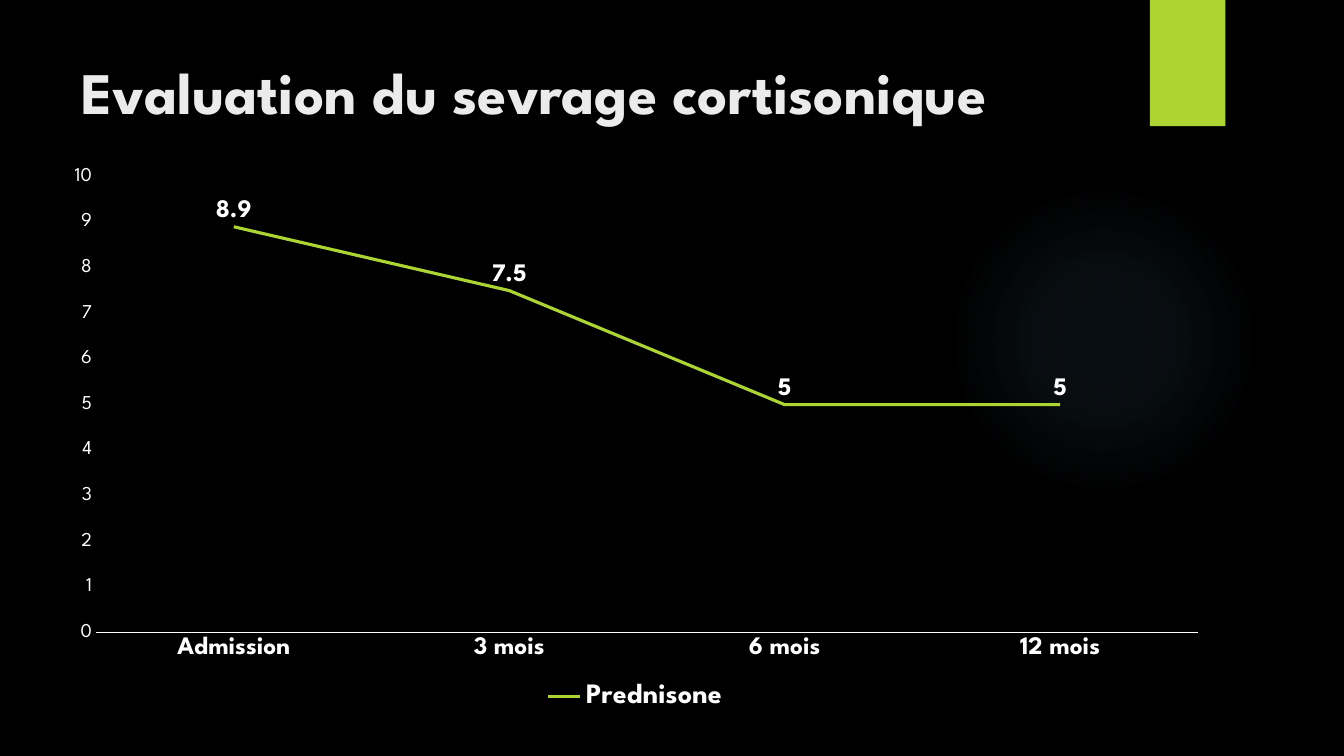
from dataclasses import dataclass

from pptx import Presentation
from pptx import util as u
from pptx.chart import data as chart_data
from pptx.dml import color
from pptx.enum import chart as kinds, shapes, text
from pptx.oxml import parse_xml
from pptx.oxml.ns import nsdecls


@dataclass(frozen=True)
class Theme:
    font: str = "League Spartan"
    back: str = "000000"
    accent: str = "ACD433"
    glow: str = "7AC4F0"
    heading: str = "EBEBEB"
    body: str = "FFFFFF"
    title_size: int = 42
    legend_size: int = 20
    label_size: int = 18
    scale_size: int = 14
    base_size: int = 10


THEME = Theme()
MONTHS = ("Admission", "3 mois", "6 mois", "12 mois")
PREDNISONE = (8.9, 7.5, 5, 5)
GLOW_STOPS = ((0, 7), (36, 6), (69, 0))
PLOT_AREA = {"x": 0.04, "y": 0.035, "w": 0.94, "h": 0.817}


def rgb(code):
    return color.RGBColor.from_string(code)


def apply(target, values):
    for name, value in values.items():
        setattr(target, name, value)


def style_font(font, size, code=THEME.body, bold=False):
    apply(font, {"name": THEME.font, "size": u.Pt(size), "bold": bold})
    font.color.rgb = rgb(code)


def style_line(line, code, width):
    line.color.rgb = rgb(code)
    line.width = u.Pt(width)


def add_block(page, kind, left, top, width, height, code):
    block = page.shapes.add_shape(kind, *map(u.Cm, (left, top, width, height)))
    block.shadow.inherit = False
    block.line.fill.background()
    block.fill.solid()
    block.fill.fore_color.rgb = rgb(code)
    return block


def add_glow(page, left, top, size):
    glow = add_block(page, shapes.MSO_SHAPE.OVAL, left, top, size, size, THEME.glow)
    stops = "".join(
        f'<a:gs pos="{place * 1000}"><a:srgbClr val="{THEME.glow}">'
        f'<a:alpha val="{alpha * 1000}"/></a:srgbClr></a:gs>'
        for place, alpha in GLOW_STOPS
    )
    gradient = parse_xml(
        f'<a:gradFill {nsdecls("a")}><a:gsLst>{stops}</a:gsLst><a:path path="circle">'
        '<a:fillToRect l="50000" t="50000" r="50000" b="50000"/></a:path></a:gradFill>'
    )
    properties = glow._element.spPr
    solid = properties.find(".//{*}solidFill")
    properties.replace(solid, gradient)


def add_title(page, wording, left, top, width, height):
    box = page.shapes.add_textbox(*map(u.Cm, (left, top, width, height)))
    apply(box.text_frame, {"word_wrap": True, "vertical_anchor": text.MSO_ANCHOR.TOP})
    span = box.text_frame.paragraphs[0].add_run()
    span.text = wording
    style_font(span.font, THEME.title_size, THEME.heading, True)


def place_plot(chart):
    area = chart._chartSpace.chart.plotArea
    for layout in area.findall("{*}layout"):
        area.remove(layout)
    modes = "".join(f'<c:{side}Mode val="edge"/>' for side in "xy")
    sizes = "".join(f'<c:{name} val="{value}"/>' for name, value in PLOT_AREA.items())
    area.insert(0, parse_xml(
        f'<c:layout {nsdecls("c")}><c:manualLayout><c:layoutTarget val="inner"/>'
        f"{modes}{sizes}</c:manualLayout></c:layout>"
    ))


def style_axis(axis, size, bold):
    apply(axis, {
        "has_major_gridlines": False,
        "major_tick_mark": kinds.XL_TICK_MARK.NONE,
        "minor_tick_mark": kinds.XL_TICK_MARK.NONE,
    })
    style_font(axis.tick_labels.font, size, bold=bold)


def add_dose_chart(page, left, top, width, height):
    doses = chart_data.CategoryChartData()
    doses.categories = MONTHS
    doses.add_series("Prednisone", PREDNISONE)
    frame = page.shapes.add_chart(
        kinds.XL_CHART_TYPE.LINE, *map(u.Cm, (left, top, width, height)), doses
    )
    chart = frame.chart
    apply(chart, {"has_title": False, "has_legend": True})
    style_font(chart.font, THEME.base_size)
    apply(chart.legend, {
        "position": kinds.XL_LEGEND_POSITION.BOTTOM, "include_in_layout": False,
    })
    style_font(chart.legend.font, THEME.legend_size, bold=True)

    style_axis(chart.category_axis, THEME.label_size, True)
    style_line(chart.category_axis.format.line, THEME.body, 0.75)
    style_axis(chart.value_axis, THEME.scale_size, False)
    chart.value_axis.format.line.fill.background()
    apply(chart.value_axis, {"minimum_scale": 0, "maximum_scale": 10, "major_unit": 1})

    plot = chart.plots[0]
    plot.vary_by_categories = False
    series = plot.series[0]
    series.smooth = False
    series.marker.style = kinds.XL_MARKER_STYLE.NONE
    style_line(series.format.line, THEME.accent, 2.25)
    labels = series.data_labels
    apply(labels, {"show_value": True, "position": kinds.XL_LABEL_POSITION.ABOVE})
    style_font(labels.font, THEME.label_size, bold=True)
    place_plot(chart)


def main():
    deck = Presentation()
    apply(deck, {"slide_width": u.Cm(33.87), "slide_height": u.Cm(19.05)})
    page = deck.slides.add_slide(deck.slide_layouts[6])
    page.background.fill.solid()
    page.background.fill.fore_color.rgb = rgb(THEME.back)
    add_glow(page, 23.9, 4.65, 7.82)
    add_block(page, shapes.MSO_SHAPE.RECTANGLE, 28.98, 0, 1.9, 3.18, THEME.accent)
    add_title(page, "Evaluation du sevrage cortisonique", 1.8, 1.27, 26.14, 3.89)
    add_dose_chart(page, 1.24, 3.96, 29.54, 14.07)
    deck.save("out.pptx")


if __name__ == "__main__":
    main()
